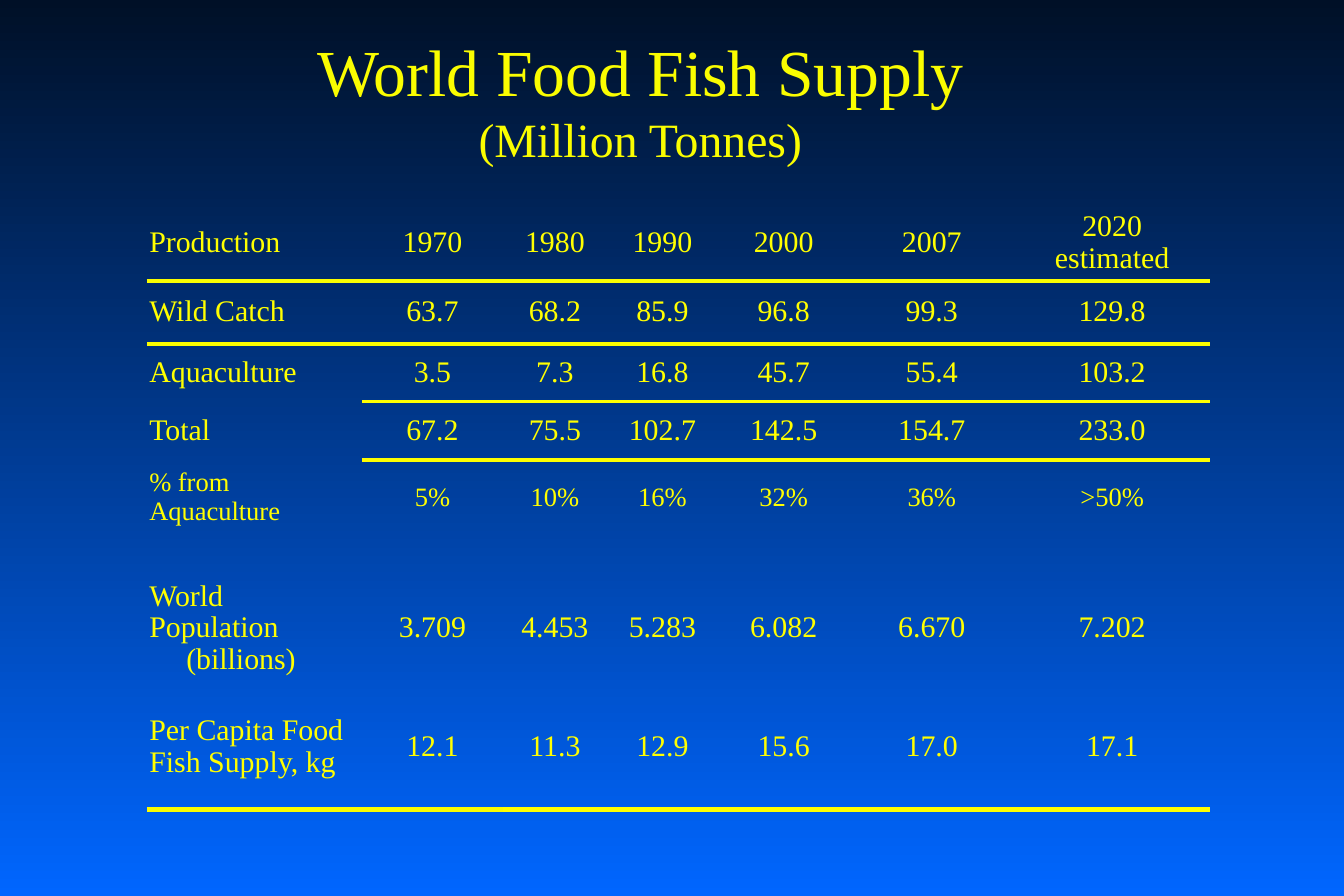
from lxml import etree
from pptx import Presentation
from pptx import util as u
from pptx.dml.color import RGBColor
from pptx.enum import text
from pptx.oxml.ns import qn

FONT = "Times New Roman"
COLOURS = {"top": "001027", "bottom": "0066FF", "title": "FAFD00", "text": "FFFF00"}
TITLE = [("World Food Fish Supply", 39.6), ("(Million Tonnes)", 28.8)]
ROWS = [
    ("Production", "1970", "1980", "1990", "2000", "2007", "2020\nestimated"),
    ("Wild Catch", "63.7", "68.2", "85.9", "96.8", "99.3", "129.8"),
    ("Aquaculture", "3.5", "7.3", "16.8", "45.7", "55.4", "103.2"),
    ("Total", "67.2", "75.5", "102.7", "142.5", "154.7", "233.0"),
    ("% from\nAquaculture", "5%", "10%", "16%", "32%", "36%", ">50%"),
    ("",) * 7,
    ("World Population\n(billions)", "3.709", "4.453", "5.283", "6.082", "6.670", "7.202"),
    ("Per Capita Food Fish Supply, kg", "12.1", "11.3", "12.9", "15.6", "17.0", "17.1"),
]
WIDTHS = [1.8, 1.18, 0.87, 0.93, 1.1, 1.38, 1.64]
HEIGHTS = [0.63, 0.53, 0.48, 0.49, 0.63, 0.3, 0.95, 1.04]
PERCENT_ROW = 4
RULES = [
    (0, range(7), "title", 3),
    (2, range(1, 7), "text", 2.25),
    (7, range(2), "title", 3),
    (7, range(2, 7), "text", 3),
]
NO_GRID_STYLE = "{2D5ABB26-0587-4C30-8999-92F81FD0307C}"


def add_text(para, words, size, colour, align):
    para.alignment = align
    span = para.add_run()
    span.text = words
    span.font.name = FONT
    span.font.size = u.Pt(size)
    span.font.color.rgb = RGBColor.from_string(COLOURS[colour])


def add_border(cell, side, colour, width):
    line = etree.Element(qn("a:" + side), w=str(u.Pt(width)))
    fill = etree.SubElement(line, qn("a:solidFill"))
    etree.SubElement(fill, qn("a:srgbClr"), val=COLOURS[colour])
    cell._tc.get_or_add_tcPr().insert(0, line)


def add_title(page):
    box = page.shapes.title
    box.left, box.top, box.width, box.height = map(u.Inches, (1.07, 0.16, 8.58, 1.34))
    frame = box.text_frame
    frame.auto_size = text.MSO_AUTO_SIZE.NONE
    frame.vertical_anchor = text.MSO_ANCHOR.MIDDLE
    para = frame.paragraphs[0]
    for index, (words, size) in enumerate(TITLE):
        if index:
            para.add_line_break()
        add_text(para, words, size, "title", text.PP_ALIGN.CENTER)


def fill_cell(cell, words, size, is_label):
    cell.fill.background()
    cell.vertical_anchor = text.MSO_ANCHOR.MIDDLE
    cell.margin_left = u.Inches(0.02)
    cell.margin_right = u.Inches(0.05 if is_label else 0.02)
    cell.margin_top = cell.margin_bottom = 0
    align = text.PP_ALIGN.LEFT if is_label else text.PP_ALIGN.CENTER
    frame = cell.text_frame
    for index, line in enumerate(words.split("\n") if words else []):
        para = frame.add_paragraph() if index else frame.paragraphs[0]
        add_text(para, line, size, "text", align)
        para.line_spacing = 0.96
        if line.startswith("("):
            para._p.get_or_add_pPr().set("marL", str(u.Inches(0.31)))


def add_supply_table(page):
    frame = page.shapes.add_table(
        len(ROWS), len(WIDTHS), u.Inches(1.23), u.Inches(1.72),
        u.Inches(sum(WIDTHS)), u.Inches(sum(HEIGHTS)))
    table = frame.table
    table.first_row = table.horz_banding = False
    table._tbl.tblPr.find(qn("a:tableStyleId")).text = NO_GRID_STYLE
    for column, width in zip(table.columns, WIDTHS):
        column.width = u.Inches(width)
    for row, height in zip(table.rows, HEIGHTS):
        row.height = u.Inches(height)
    for r, row in enumerate(ROWS):
        for c, words in enumerate(row):
            fill_cell(table.cell(r, c), words, 16 if r == PERCENT_ROW else 18, c == 0)
    for r, columns, colour, width in RULES:
        for c in columns:
            add_border(table.cell(r, c), "lnB", colour, width)
            if r + 1 < len(ROWS):
                add_border(table.cell(r + 1, c), "lnT", colour, width)


def main():
    deck = Presentation()
    deck.slide_width, deck.slide_height = u.Inches(11.25), u.Inches(7.5)
    page = deck.slides.add_slide(deck.slide_layouts[5])
    fill = page.background.fill
    fill.gradient()
    fill.gradient_angle = 270
    for stop, position, name in zip(fill.gradient_stops, (0, 1), ("top", "bottom")):
        stop.position = position
        stop.color.rgb = RGBColor.from_string(COLOURS[name])
    add_title(page)
    add_supply_table(page)
    deck.save("out.pptx")


if __name__ == "__main__":
    main()
